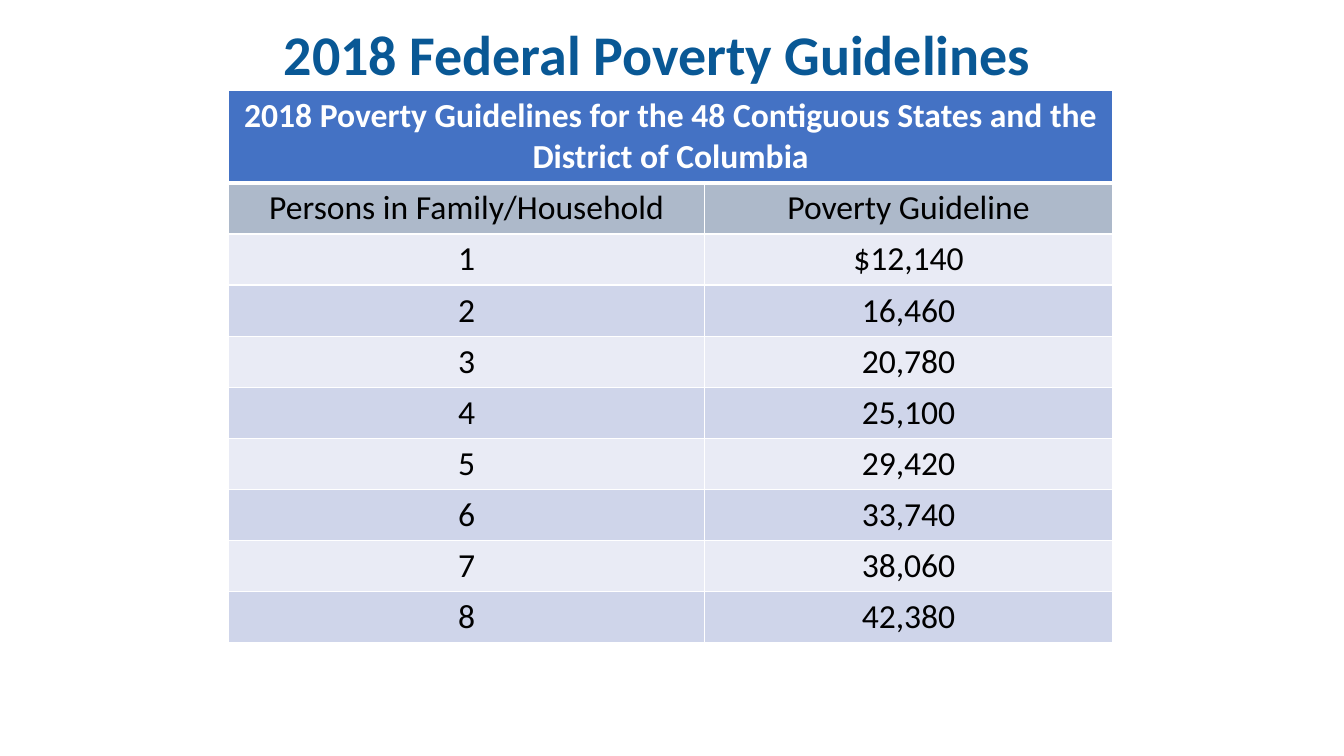
from dataclasses import dataclass
from lxml.etree import SubElement as Sub
from pptx import Presentation
from pptx.dml.color import RGBColor as Rgb
from pptx.enum.text import MSO_ANCHOR as Anchor, MSO_AUTO_SIZE as Fit, PP_ALIGN as Align
from pptx.oxml.ns import qn
from pptx.util import Pt


@dataclass(frozen=True)
class Theme:
    font: str = "Calibri"
    title: str = "095895"
    head: str = "4472C4"
    label: str = "ADB9CA"
    bands: tuple = ("E9EBF5", "CFD5EA")
    light: str = "FFFFFF"
    dark: str = "000000"
    big: int = 40
    body: int = 24


THEME = Theme()
HEAD = "2018 Poverty Guidelines for the 48 Contiguous States and the District of Columbia"
LABELS = ("Persons in Family/Household", "Poverty Guideline")
LIMITS = ("$12,140", "16,460", "20,780", "25,100", "29,420", "33,740", "38,060", "42,380")


def write(frame, text, size, color, bold):
    frame.text = text
    para = frame.paragraphs[0]
    para.alignment = Align.CENTER
    font = para.runs[0].font
    for name, value in {"name": THEME.font, "size": Pt(size), "bold": bold}.items():
        setattr(font, name, value)
    font.color.rgb = Rgb.from_string(color)
    return para


def edge(cell, top, bottom):
    props = cell._tc.get_or_add_tcPr()
    for side, width in {"L": 1, "R": 1, "T": top, "B": bottom}.items():
        line = Sub(props, qn(f"a:ln{side}"), w=str(Pt(width)))
        Sub(Sub(line, qn("a:solidFill")), qn("a:srgbClr"), val=THEME.light)


def paint(cell, fill, top=1, bottom=1):
    edge(cell, top, bottom)
    cell.fill.solid()
    cell.fill.fore_color.rgb = Rgb.from_string(fill)


def add_title(slide, left, top, width, height):
    title = slide.shapes.title
    box = {"left": left, "top": top, "width": width, "height": height}
    for name, value in box.items():
        setattr(title, name, Pt(value))
    frame = title.text_frame
    look = {"word_wrap": True, "auto_size": Fit.NONE, "vertical_anchor": Anchor.MIDDLE}
    for name, value in look.items():
        setattr(frame, name, value)
    para = write(frame, "2018 Federal Poverty Guidelines", THEME.big, THEME.title, True)
    para.line_spacing = 0.9


def add_grid(slide, left, top, width, height):
    rows = [LABELS] + [(str(size), limit) for size, limit in enumerate(LIMITS, 1)]
    shape = slide.shapes.add_table(len(rows) + 1, 2, Pt(left), Pt(top), Pt(width), Pt(height))
    table = shape.table
    first = 339.8
    for col, span in zip(table.columns, (first, width - first)):
        col.width = Pt(span)
    for num, row in enumerate(table.rows):
        row.height = Pt(32.4 if num else 56.2)
    shape.height = Pt(height)

    head = table.cell(0, 0)
    head.merge(table.cell(0, 1))
    for cell in table.rows[0].cells:
        paint(cell, THEME.head, bottom=3)
    write(head.text_frame, HEAD, THEME.body, THEME.light, True)

    for num, texts in enumerate(rows):
        fill = THEME.bands[(num - 1) % 2] if num else THEME.label
        for cell, text in zip(table.rows[num + 1].cells, texts):
            paint(cell, fill, top=1 if num else 3)
            write(cell.text_frame, text, THEME.body, THEME.dark, False)


def main():
    deck = Presentation()
    deck.slide_width, deck.slide_height = Pt(960), Pt(540)
    slide = deck.slides.add_slide(deck.slide_layouts[5])
    add_title(slide, 55.4, 7.9, 828, 65.5)
    add_grid(slide, 163.4, 64.8, 631.4, 388.8)
    deck.save("out.pptx")


if __name__ == "__main__":
    main()
